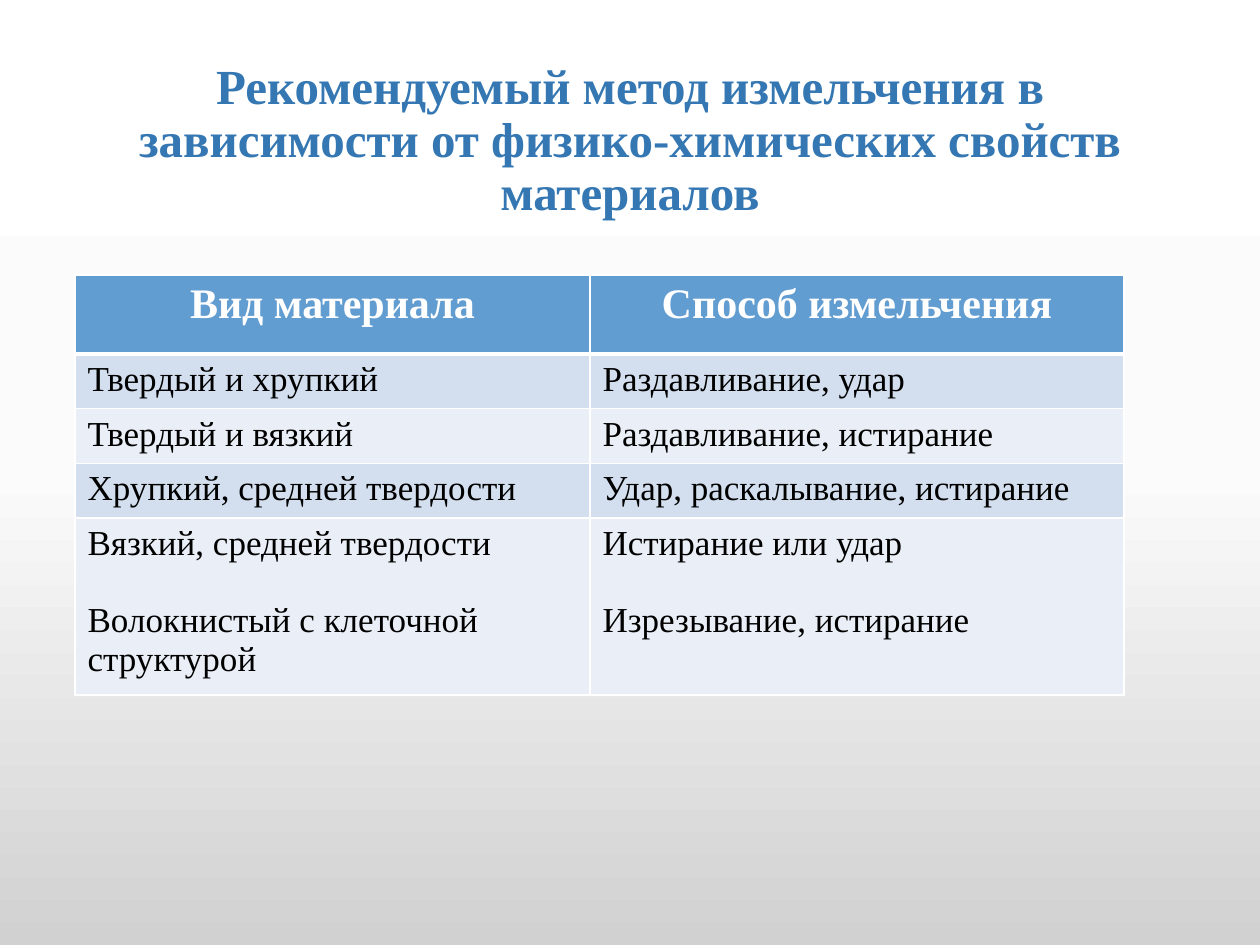
from lxml.etree import SubElement
from pptx import Presentation
from pptx.dml.color import RGBColor
from pptx.enum.text import MSO_ANCHOR, PP_ALIGN
from pptx.oxml.ns import qn
from pptx.util import Pt

# Content
TITLE = ("Рекомендуемый метод измельчения в зависимости "
         "от физико-химических свойств материалов")
ROWS = [
    ("Вид материала", "Способ измельчения"),
    ("Твердый и хрупкий", "Раздавливание, удар"),
    ("Твердый и вязкий", "Раздавливание, истирание"),
    ("Хрупкий, средней твердости", "Удар, раскалывание, истирание"),
    ("Вязкий, средней твердости\nВолокнистый с клеточной структурой",
     "Истирание или удар\nИзрезывание, истирание"),
]

# Layout in px
SLIDE_SIZE = (1260, 945)
TITLE_BOX = (87, 50, 1086, 183)
TABLE_ORIGIN = (75, 275)
COLUMN_WIDTHS = (515, 534)
ROW_HEIGHTS = (79, 52, 52, 52, 168)

FONT = "Times New Roman"
COLORS = {"title": "3477B2", "header": "629DD1", "odd": "D3DFEE",
          "even": "EAEFF7", "white": "FFFFFF", "text": "000000"}
BACKGROUND_STOPS = [(0, "FFFFFF"), (50, "FBFBFB"), (100, "D1D1D1")]


def px(value):
    return round(value * 914400 / 126)


def style(paragraph, size, color, bold, align):
    paragraph.alignment = align
    font = paragraph.font
    font.name, font.size, font.bold = FONT, Pt(size), bold
    font.color.rgb = RGBColor.from_string(COLORS[color])


def set_background(slide):
    fill = slide.background.fill
    fill.gradient()
    fill.gradient_angle = 270
    stop_list = slide.element.find(".//" + qn("a:gsLst"))
    for stop in list(stop_list):
        stop_list.remove(stop)
    for percent, color in BACKGROUND_STOPS:
        stop = SubElement(stop_list, qn("a:gs"), pos=str(percent * 1000))
        SubElement(stop, qn("a:srgbClr"), val=color)


def set_borders(cell, bottom_width):
    properties = cell._tc.get_or_add_tcPr()
    widths = {"a:lnL": 1, "a:lnR": 1, "a:lnT": 1, "a:lnB": bottom_width}
    for index, (side, width) in enumerate(widths.items()):
        line = SubElement(properties, qn(side), w=str(Pt(width)))
        fill = SubElement(line, qn("a:solidFill"))
        SubElement(fill, qn("a:srgbClr"), val=COLORS["white"])
        properties.insert(index, line)  # borders come before the fill


def add_title(slide):
    frame = slide.shapes.add_textbox(*map(px, TITLE_BOX)).text_frame
    frame.word_wrap = True
    frame.vertical_anchor = MSO_ANCHOR.MIDDLE
    frame.text = TITLE
    paragraph = frame.paragraphs[0]
    paragraph.line_spacing = 0.9
    style(paragraph, 28, "title", True, PP_ALIGN.CENTER)


def fill_cell(cell, text, row):
    is_header = row == 0
    fill_name = "header" if is_header else ("even", "odd")[row % 2]
    cell.fill.solid()
    cell.fill.fore_color.rgb = RGBColor.from_string(COLORS[fill_name])
    # The line under the header is heavier; both neighbours carry it
    set_borders(cell, 3 if is_header else 1)
    cell.text = text
    for index, paragraph in enumerate(cell.text_frame.paragraphs):
        if is_header:
            style(paragraph, 24, "white", True, PP_ALIGN.CENTER)
        else:
            style(paragraph, 20, "text", False, PP_ALIGN.LEFT)
        if index:
            paragraph.space_before = Pt(22)


def add_material_table(slide):
    size = (sum(COLUMN_WIDTHS), sum(ROW_HEIGHTS))
    table = slide.shapes.add_table(len(ROWS), len(COLUMN_WIDTHS),
                                   *map(px, TABLE_ORIGIN + size)).table
    for column, width in zip(table.columns, COLUMN_WIDTHS):
        column.width = px(width)
    for row, (texts, height) in enumerate(zip(ROWS, ROW_HEIGHTS)):
        table.rows[row].height = px(height)
        for column, text in enumerate(texts):
            fill_cell(table.cell(row, column), text, row)


def main():
    presentation = Presentation()
    presentation.slide_width, presentation.slide_height = map(px, SLIDE_SIZE)
    slide = presentation.slides.add_slide(presentation.slide_layouts[6])
    set_background(slide)
    add_title(slide)
    add_material_table(slide)
    presentation.save("out.pptx")


if __name__ == "__main__":
    main()
